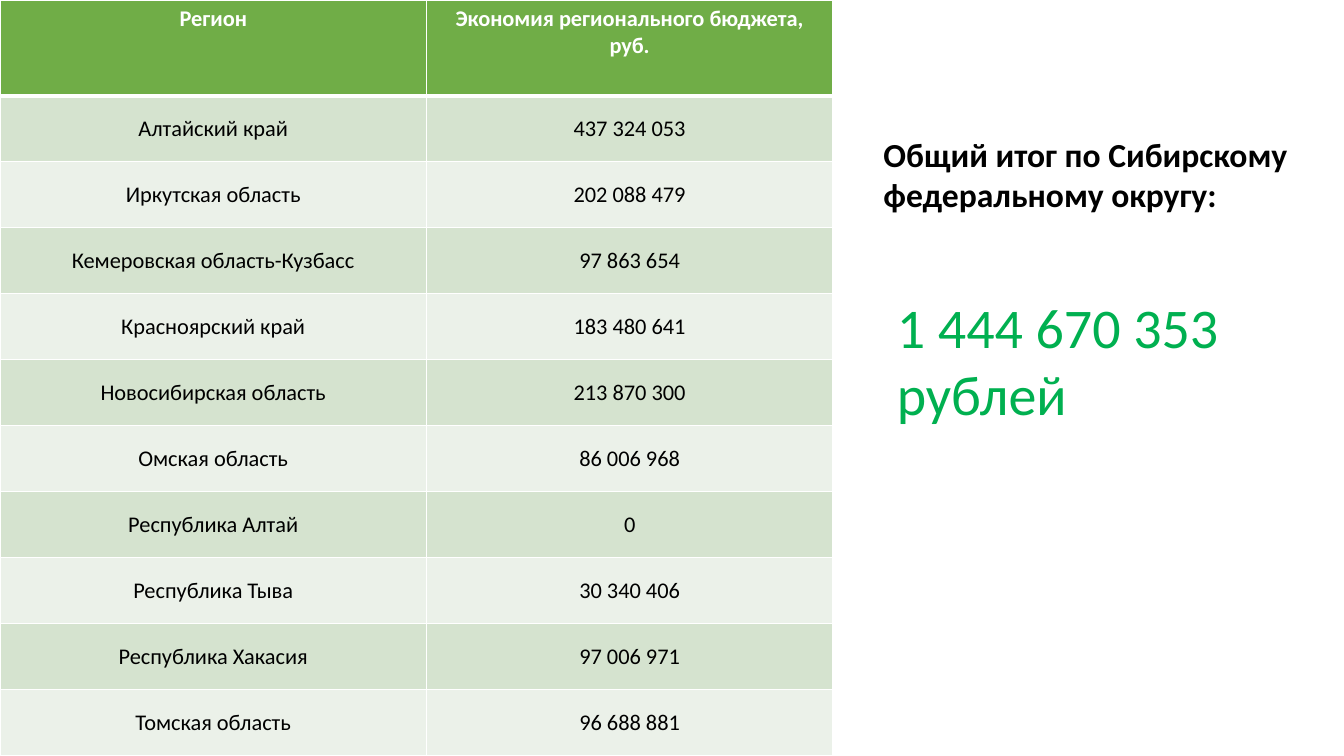
from lxml.etree import SubElement
from pptx import Presentation
from pptx.dml.color import RGBColor
from pptx.enum.text import MSO_ANCHOR as Anchor, MSO_AUTO_SIZE as AutoSize, PP_ALIGN as Align
from pptx.oxml.ns import qn
from pptx.util import Inches, Pt

WIDTH, HEIGHT = 13.33, 7.5
HEADER = ("Регион", "Экономия регионального бюджета, руб.")
SAVINGS = [
    ("Алтайский край", "437 324 053"),
    ("Иркутская область", "202 088 479"),
    ("Кемеровская область-Кузбасс", "97 863 654"),
    ("Красноярский край", "183 480 641"),
    ("Новосибирская область", "213 870 300"),
    ("Омская область", "86 006 968"),
    ("Республика Алтай", "0"),
    ("Республика Тыва", "30 340 406"),
    ("Республика Хакасия", "97 006 971"),
    ("Томская область", "96 688 881"),
]


def color(hex_code):
    """Turn a hex string into a colour."""
    return RGBColor.from_string(hex_code)


class BudgetSlide:
    """Hold the style and the slide, and add its elements."""

    font = "Calibri"
    white, black, total_green = "FFFFFF", "000000", "00B050"
    header_fill, bands = "70AD47", ("D5E3CF", "EBF1E9")

    def __init__(self, deck):
        """Start a blank slide in the deck."""
        self.slide = deck.slides.add_slide(deck.slide_layouts[6])

    def format_text(self, frame, size, ink, bold=False, align=Align.LEFT):
        """Format every run of a text frame."""
        for paragraph in frame.paragraphs:
            paragraph.alignment = align
            for run in paragraph.runs:
                run.font.name = self.font
                run.font.size = Pt(size)
                run.font.bold = bold
                run.font.color.rgb = color(ink)

    def border(self, cell, **widths):
        """Draw white cell borders with widths in points."""
        properties = cell._tc.get_or_add_tcPr()
        for place, (side, width) in enumerate(widths.items()):
            line = SubElement(properties, qn(f"a:ln{side}"), w=str(Pt(width)))
            fill = SubElement(line, qn("a:solidFill"))
            SubElement(fill, qn("a:srgbClr"), val=self.white)
            properties.insert(place, line)

    def table(self, rows, column_widths, header_height):
        """Add a full-height banded table at the left edge."""
        row_height = (HEIGHT - header_height) / (len(rows) - 1)
        grid = self.slide.shapes.add_table(
            len(rows), len(column_widths), 0, 0, Inches(sum(column_widths)), Inches(HEIGHT)
        ).table
        for column, width in zip(grid.columns, column_widths):
            column.width = Inches(width)
        for r, values in enumerate(rows):
            is_header = r == 0
            grid.rows[r].height = Inches(header_height if is_header else row_height)
            for c, value in enumerate(values):
                cell = grid.cell(r, c)
                cell.text_frame.text = value
                self.format_text(cell.text_frame, 16, self.white if is_header else self.black,
                                 is_header, Align.CENTER)
                cell.fill.solid()
                cell.fill.fore_color.rgb = color(self.header_fill if is_header else self.bands[(r - 1) % 2])
                cell.vertical_anchor = Anchor.TOP if is_header else Anchor.MIDDLE
                if c and not is_header:
                    cell.margin_left = cell.margin_right = cell.margin_top = Inches(0.01)
                    cell.margin_bottom = 0
                self.border(cell, L=1, R=1, T=3 if r == 1 else 1, B=3 if is_header else 1)

    def text(self, content, left, top, height, size, ink, bold=False):
        """Add text reaching the right edge, placed by shares of the slide."""
        box = self.slide.shapes.add_textbox(
            Inches(left * WIDTH), Inches(top * HEIGHT),
            Inches((1 - left) * WIDTH), Inches(height * HEIGHT))
        frame = box.text_frame
        frame.word_wrap = True
        frame.auto_size = AutoSize.SHAPE_TO_FIT_TEXT
        frame.text = content
        self.format_text(frame, size, ink, bold)


def main():
    """Build and save the deck."""
    deck = Presentation()
    deck.slide_width, deck.slide_height = Inches(WIDTH), Inches(HEIGHT)
    page = BudgetSlide(deck)
    page.table([HEADER, *SAVINGS], column_widths=(4.23, 4.03), header_height=0.95)
    page.text("Общий итог по Сибирскому федеральному округу:",
              0.65, 0.17, 0.12, 24, page.black, bold=True)
    page.text("1 444 670 353 рублей", 0.66, 0.38, 0.19, 40, page.total_green)
    deck.save("out.pptx")


if __name__ == "__main__":
    main()
